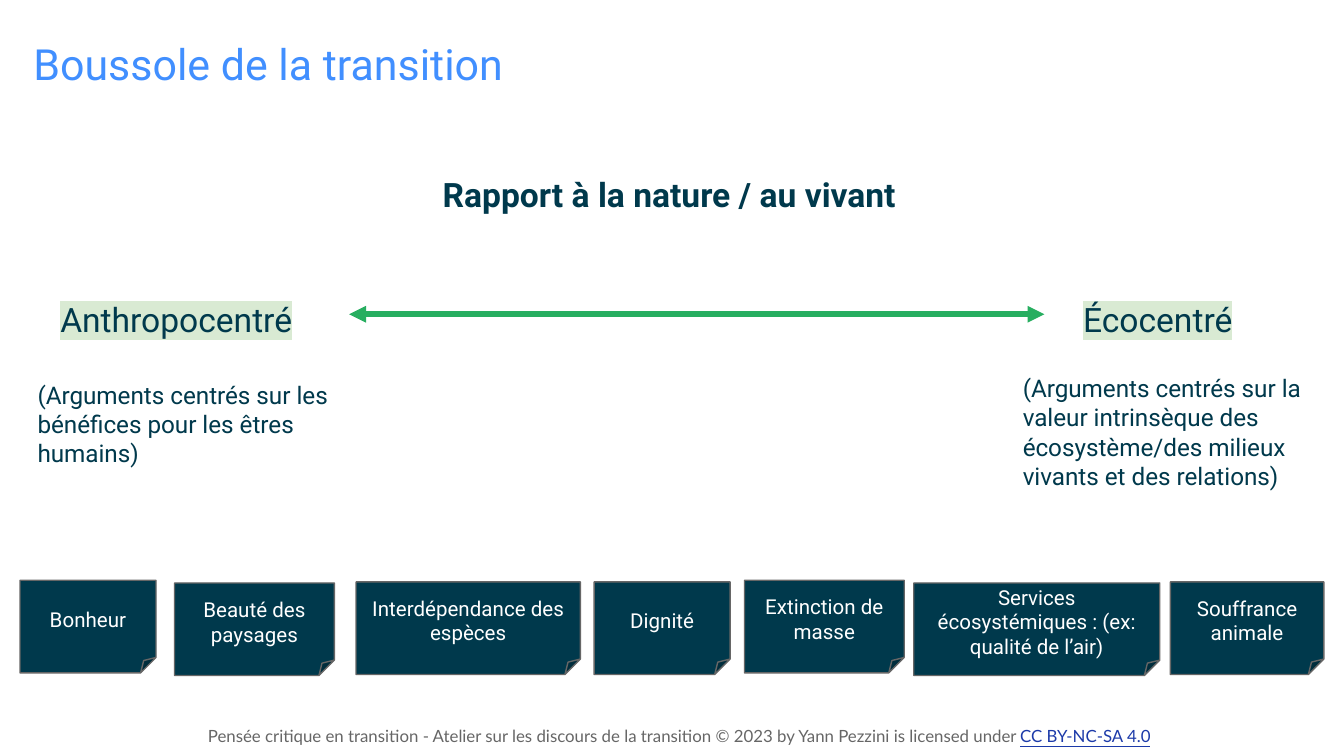
from dataclasses import dataclass

from lxml.etree import SubElement
from pptx import Presentation
from pptx.dml.color import RGBColor as Rgb
from pptx.enum.shapes import MSO_CONNECTOR as Link, MSO_SHAPE as Kind
from pptx.enum.text import MSO_ANCHOR as Anchor, MSO_AUTO_SIZE as Fit, PP_ALIGN as Align
from pptx.oxml.ns import qn
from pptx.util import Cm, Pt


@dataclass(frozen=True)
class Theme:
    font: str = "Roboto"
    small: str = "Lato"
    ink: str = "00394C"
    blue: str = "418FFF"
    green: str = "27AE60"
    pale: str = "D9EAD3"
    gray: str = "666666"
    link: str = "1C3AA9"
    white: str = "FFFFFF"
    title: int = 23
    head: int = 18
    body: int = 13
    note: int = 11
    foot: int = 9


class Deck:
    def __init__(self, theme):
        self.theme = theme
        self.prs = Presentation()
        self.prs.slide_width, self.prs.slide_height = Cm(25.4), Cm(14.29)
        self.slide = self.prs.slides.add_slide(self.prs.slide_layouts[5])
        self.shapes = self.slide.shapes

    def frame(self, shape, anchor=Anchor.TOP, fit=Fit.NONE):
        frame = shape.text_frame
        frame.word_wrap = True
        frame.auto_size = fit
        frame.vertical_anchor = anchor
        frame.margin_left = frame.margin_right = Cm(0.25)
        frame.margin_top = frame.margin_bottom = Cm(0.25)
        return frame

    def style(self, para, size, color, align=Align.LEFT, name=None, bold=False):
        para.alignment = align
        font = para.font
        font.name = name or self.theme.font
        font.size = Pt(size)
        font.bold = bold
        font.color.rgb = Rgb.from_string(color)

    def title(self, text, box):
        shape = self.shapes.title
        shape.left, shape.top, shape.width, shape.height = map(Cm, box)
        para = self.frame(shape).paragraphs[0]
        para.text = text
        self.style(para, self.theme.title, self.theme.blue)

    def text(self, text, box, size, align=Align.LEFT, bold=False, gap=1.0):
        shape = self.shapes.add_textbox(*map(Cm, box))
        para = self.frame(shape, fit=Fit.SHAPE_TO_FIT_TEXT).paragraphs[0]
        para.text = text
        para.line_spacing = gap
        self.style(para, size, self.theme.ink, align, bold=bold)
        return para

    def pole(self, text, box):
        para = self.text(text, box, self.theme.head, gap=1.15)
        props = para.runs[0].font._element
        mark = SubElement(props, qn("a:highlight"))
        SubElement(mark, qn("a:srgbClr"), val=self.theme.pale)

    def note(self, text, left, top, width):
        shape = self.shapes.add_shape(
            Kind.FOLDED_CORNER, Cm(left), Cm(top), Cm(width), Cm(1.75)
        )
        shape.shadow.inherit = False
        shape.fill.solid()
        shape.fill.fore_color.rgb = Rgb.from_string(self.theme.ink)
        shape.line.color.rgb = Rgb.from_string(self.theme.gray)
        shape.line.width = Pt(0.75)
        para = self.frame(shape, Anchor.MIDDLE).paragraphs[0]
        para.text = text
        self.style(para, self.theme.note, self.theme.white, Align.CENTER)

    def arrow(self, left, right, top):
        line = self.shapes.add_connector(
            Link.STRAIGHT, Cm(left), Cm(top), Cm(right), Cm(top)
        )
        line.line.color.rgb = Rgb.from_string(self.theme.green)
        line.line.width = Pt(3)
        stroke = line.line._get_or_add_ln()
        for end in ("a:headEnd", "a:tailEnd"):
            SubElement(stroke, qn(end), type="triangle")
        SubElement(line._element.spPr, qn("a:effectLst"))

    def footer(self, text, link, box):
        shape = self.shapes.add_textbox(*map(Cm, box))
        para = self.frame(shape).paragraphs[0]
        self.style(para, self.theme.foot, self.theme.gray, name=self.theme.small)
        para.add_run().text = text
        run = para.add_run()
        run.text = link
        run.font.underline = True
        run.font.color.rgb = Rgb.from_string(self.theme.link)

    def save(self):
        self.prs.save("out.pptx")


NOTES = [
    ("Bonheur", 0.38, 10.97, 2.57),
    ("Beauté des paysages", 3.3, 11.02, 3.02),
    ("Interdépendance des espèces", 6.73, 11, 4.24),
    ("Dignité", 11.23, 11, 2.57),
    ("Extinction de masse", 14.07, 10.97, 3.02),
    ("Services écosystémiques : (ex: qualité de l’air)", 17.27, 11.02, 4.65),
    ("Souffrance animale", 22.12, 11, 2.9),
]


def main():
    theme = Theme()
    deck = Deck(theme)
    deck.title("Boussole de la transition", (0.38, 0.46, 10.52, 3.38))
    deck.footer(
        "Pensée critique en transition - Atelier sur les discours de la transition "
        "© 2023 by Yann Pezzini is licensed under ",
        "CC BY-NC-SA 4.0",
        (3.68, 13.46, 19.43, 1.55),
    )
    for note in NOTES:
        deck.note(*note)
    deck.arrow(6.6, 19.74, 5.94)
    deck.text(
        "Rapport à la nature / au vivant",
        (6.25, 2.92, 12.8, 1.27),
        theme.head,
        Align.CENTER,
        bold=True,
        gap=1.15,
    )
    deck.pole("Anthropocentré", (0.89, 5.28, 5.56, 1.27))
    deck.pole("Écocentré", (20.22, 5.28, 4.88, 1.27))
    deck.text(
        "(Arguments centrés sur les bénéfices pour les êtres humains)",
        (0.46, 6.93, 6.68, 2.18),
        theme.body,
    )
    deck.text(
        "(Arguments centrés sur la valeur intrinsèque des "
        "écosystème/des milieux vivants et des relations)",
        (19.08, 6.81, 6.48, 2.74),
        theme.body,
    )
    deck.save()


if __name__ == "__main__":
    main()
